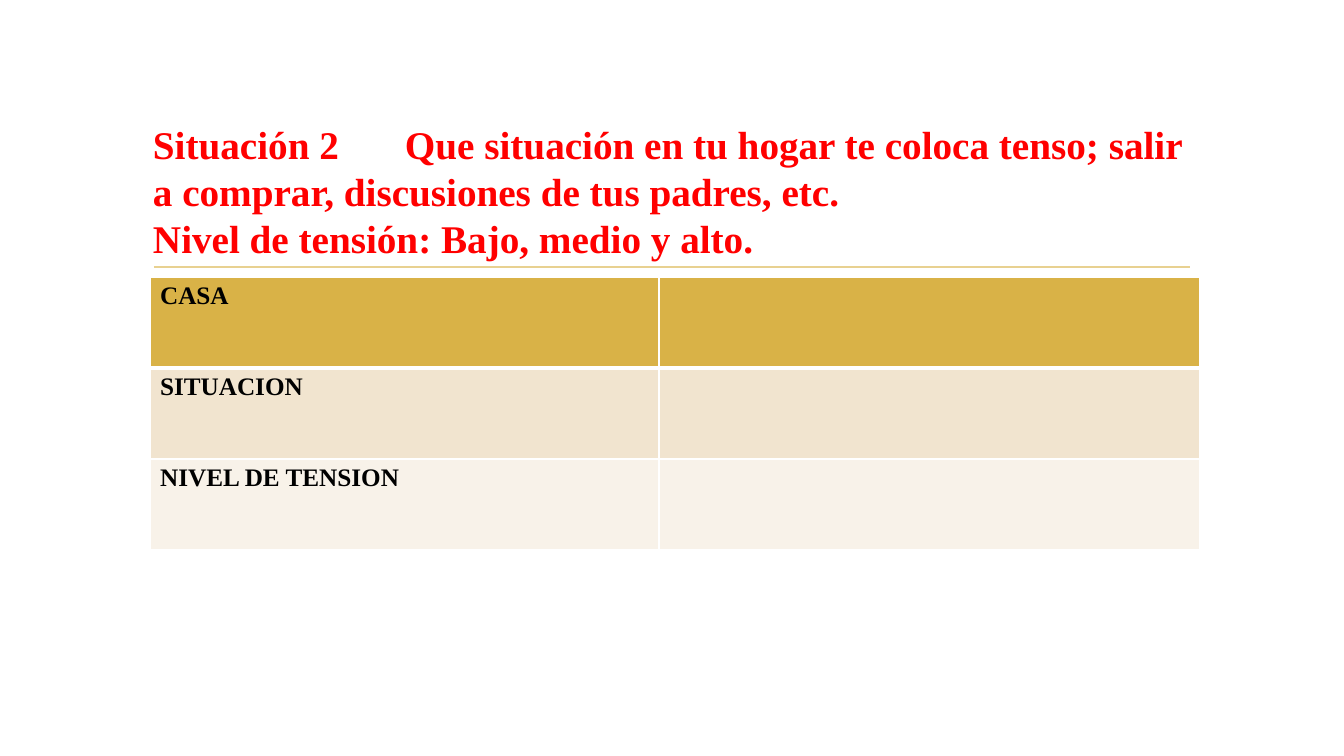
"""Build the slide on tense situations at home, with its answer table."""
from lxml import etree
from pptx import Presentation
from pptx import util as u
from pptx.dml.color import RGBColor
from pptx.enum import shapes, text
from pptx.oxml import ns

THEME = {
    "font": "Times New Roman",
    "title": {"size": u.Pt(28), "color": "FF0000"},
    "label": {"size": u.Pt(18), "color": "000000"},
    "rule": "E8D191",
    "border": "FFFFFF",
    "rows": ["D9B247", "F1E4CF", "F8F2E9"],
}
PX = 914400 / 100.8


def px(length):
    return u.Emu(round(length * PX))


def style(font, role):
    settings = {"name": THEME["font"], "size": THEME[role]["size"], "bold": True}
    for name, value in settings.items():
        setattr(font, name, value)
    font.color.rgb = RGBColor.from_string(THEME[role]["color"])


deck = Presentation()
deck.slide_width, deck.slide_height = px(1344), px(756)
slide = deck.slides.add_slide(deck.slide_layouts[5])

rule = slide.shapes.add_connector(
    shapes.MSO_CONNECTOR.STRAIGHT, px(154), px(267), px(1190), px(267))
rule.line.color.rgb = RGBColor.from_string(THEME["rule"])
rule.line.width = u.Pt(1.25)
etree.SubElement(rule._element.spPr, ns.qn("a:effectLst"))

title = slide.shapes.title
title_place = {"left": 143, "top": 108, "width": 1058, "height": 154}
for name, value in title_place.items():
    setattr(title, name, px(value))
frame_format = {
    "margin_left": px(10), "margin_right": px(10),
    "margin_top": px(12), "margin_bottom": 0,
    "word_wrap": True, "auto_size": text.MSO_AUTO_SIZE.NONE,
    "vertical_anchor": text.MSO_ANCHOR.TOP,
}
for name, value in frame_format.items():
    setattr(title.text_frame, name, value)
heading = title.text_frame.paragraphs[0]
heading.text = (
    "Situación 2\tQue situación en tu hogar te coloca tenso; salir a comprar, "
    "discusiones de tus padres, etc.\vNivel de tensión: Bajo, medio y alto.")
heading.alignment = text.PP_ALIGN.LEFT
heading.line_spacing = u.Pt(33.6)
tabs = etree.SubElement(heading._p.get_or_add_pPr(), ns.qn("a:tabLst"))
etree.SubElement(tabs, ns.qn("a:tab"), pos=str(px(252)), algn="l")
style(heading.font, "title")
for run in heading.runs:
    style(run.font, "title")

labels = ["CASA", "SITUACION", "NIVEL DE TENSION"]
columns = [509, 541]
row_height = 91
answers = slide.shapes.add_table(
    len(labels), len(columns), px(150), px(277),
    px(sum(columns)), px(row_height * len(labels))).table
for column, width in zip(answers.columns, columns):
    column.width = px(width)

for row, (label, shade) in enumerate(zip(labels, THEME["rows"])):
    answers.rows[row].height = px(row_height)
    answers.cell(row, 0).text = label
    edges = {"lnL": 1, "lnR": 1, "lnT": 3 if row == 1 else 1, "lnB": 3 if row == 0 else 1}
    for cell in answers.rows[row].cells:
        properties = cell._tc.get_or_add_tcPr()
        for edge, points in edges.items():
            border = etree.SubElement(properties, ns.qn(f"a:{edge}"), w=str(u.Pt(points)))
            paint = etree.SubElement(border, ns.qn("a:solidFill"))
            etree.SubElement(paint, ns.qn("a:srgbClr"), val=THEME["border"])
        cell.fill.solid()
        cell.fill.fore_color.rgb = RGBColor.from_string(shade)
        paragraph = cell.text_frame.paragraphs[0]
        style(paragraph.font, "label")
        for run in paragraph.runs:
            style(run.font, "label")

deck.save("out.pptx")
